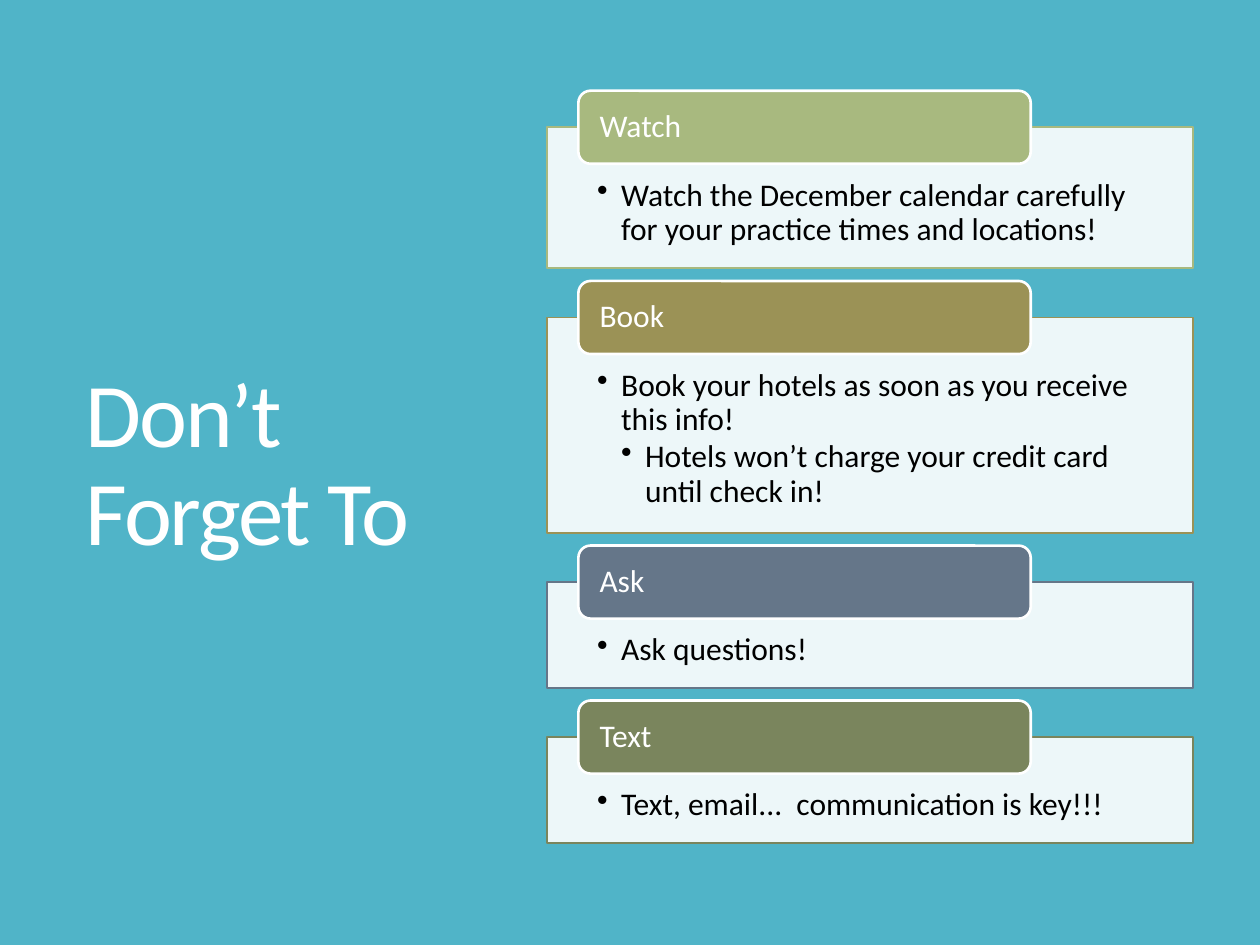
from lxml import etree
from pptx import Presentation
from pptx.dml.color import RGBColor as RGB
from pptx.enum.shapes import MSO_SHAPE as Shape
from pptx.enum.text import MSO_ANCHOR as Anchor, MSO_AUTO_SIZE as Fit, PP_ALIGN as Align
from pptx.oxml.ns import qn
from pptx.util import Inches, Pt

HUES = {
    "back": "50B4C8", "white": "FFFFFF", "black": "000000",
    "watch": "A8B97F", "book": "9B9256", "ask": "657689", "text": "7A855D",
}
# Tab label, colour, panel height, bullets as (depth, text)
CARDS = [
    ("Watch", "watch", 1.12,
     [(1, "Watch the December calendar carefully for your practice times and locations!")]),
    ("Book", "book", 1.71,
     [(1, "Book your hotels as soon as you receive this info!"),
      (2, "Hotels won’t charge your credit card until check in!")]),
    ("Ask", "ask", 0.84, [(1, "Ask questions!")]),
    ("Text", "text", 0.84, [(1, "Text, email...  communication is key!!!")]),
]
RISE = 0.29  # tab top above panel top
GAP = 0.1    # panel bottom to next tab
STEP = 0.19  # indent per bullet depth


def write(frame, lines, size=18, hue="white", anchor=Anchor.MIDDLE,
          pads=(0.1, 0.05, 0.1, 0.05), track=None):
    """Fill a text frame with (depth, text) lines; depth 0 has no bullet."""
    frame.word_wrap = True
    frame.auto_size = Fit.NONE
    frame.vertical_anchor = anchor
    (frame.margin_left, frame.margin_top,
     frame.margin_right, frame.margin_bottom) = map(Inches, pads)
    for i, (depth, text) in enumerate(lines):
        para = frame.add_paragraph() if i else frame.paragraphs[0]
        para.alignment = Align.LEFT
        para.line_spacing = 0.9
        if i:
            para.space_before = Pt(2)
        if depth:
            para.level = depth
            props = para._p.get_or_add_pPr()
            props.set("marL", str(Inches(STEP * depth)))
            props.set("indent", str(-Inches(STEP)))
            etree.SubElement(props, qn("a:buChar"), char="•")
        run = para.add_run()
        run.text = text
        run.font.size = Pt(size)
        run.font.name = "Calibri"
        run.font.color.rgb = RGB.from_string(HUES[hue])
        if track:
            run._r.get_or_add_rPr().set("spc", str(track))


def block(kind, x, y, w, h, fill, line, width):
    """Add a filled, outlined shape without shadow."""
    shape = slide.shapes.add_shape(kind, *map(Inches, (x, y, w, h)))
    shape.shadow.inherit = False
    shape.fill.solid()
    shape.fill.fore_color.rgb = RGB.from_string(HUES[fill])
    shape.line.color.rgb = RGB.from_string(HUES[line])
    shape.line.width = Pt(width)
    return shape


deck = Presentation()
deck.slide_width, deck.slide_height = Inches(10), Inches(7.5)
slide = deck.slides.add_slide(deck.slide_layouts[5])
slide.background.fill.solid()
slide.background.fill.fore_color.rgb = RGB.from_string(HUES["back"])

# Title
title = slide.shapes.title
title.left, title.top = Inches(0.58), Inches(0.7)
title.width, title.height = Inches(3.28), Inches(6.01)
write(title.text_frame, [(0, "Don’t Forget To")], size=52, track=-120)

# Cards: a see-through panel with a tab over its top edge
top = 1.01
for label, hue, high, lines in CARDS:
    panel = block(Shape.RECTANGLE, 4.34, top, 5.13, high, "white", hue, 1)
    tint = panel._element.spPr.find(qn("a:solidFill"))[0]
    etree.SubElement(tint, qn("a:alpha"), val="90000")
    write(panel.text_frame, lines, hue="black", anchor=Anchor.TOP,
          pads=(0.4, 0.41, 0.4, 0.14))

    tab = block(Shape.ROUNDED_RECTANGLE, 4.59, top - RISE, 3.59, 0.58,
                hue, "white", 1.5)
    write(tab.text_frame, [(0, label)], pads=(0.14, 0, 0.14, 0))
    top += high + GAP + RISE

deck.save("out.pptx")
